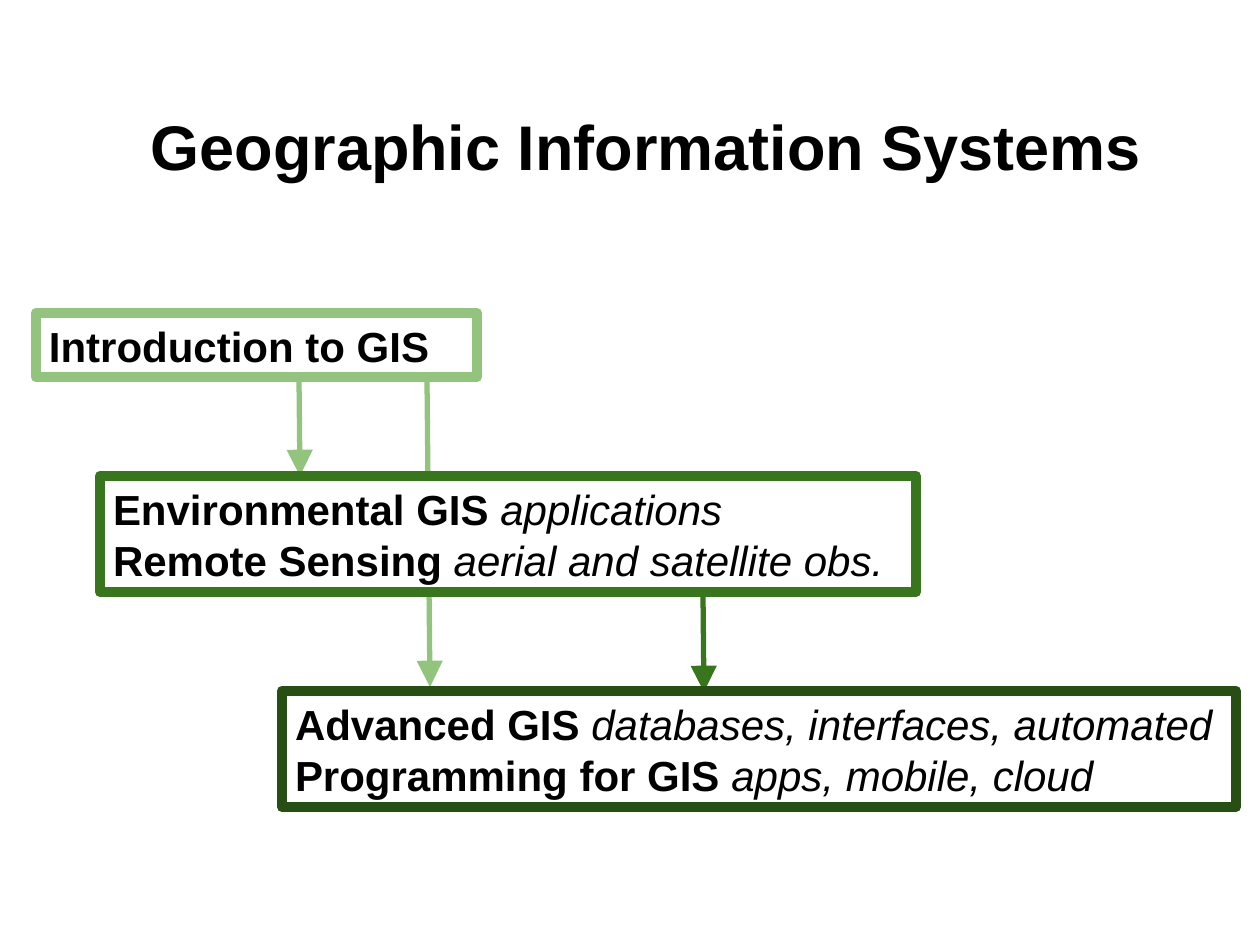
from dataclasses import dataclass

from lxml import etree
from pptx import Presentation
from pptx.dml.color import RGBColor
from pptx.enum.shapes import MSO_CONNECTOR, MSO_SHAPE
from pptx.enum.text import MSO_ANCHOR, MSO_AUTO_SIZE, PP_ALIGN
from pptx.oxml.ns import qn
from pptx.util import Emu, Pt

RECTANGLE = MSO_SHAPE.RECTANGLE
STRAIGHT = MSO_CONNECTOR.STRAIGHT
TOP, BOTTOM = MSO_ANCHOR.TOP, MSO_ANCHOR.BOTTOM
LEFT, CENTER = PP_ALIGN.LEFT, PP_ALIGN.CENTER
NO_AUTOFIT = MSO_AUTO_SIZE.NONE
TITLE_ONLY_LAYOUT = 5
PX = 914400 // 126


@dataclass(frozen=True)
class Theme:
    font: str = "Arial"
    text: str = "000000"
    box_fill: str = "FFFFFF"
    intro: str = "93C47D"
    applied: str = "38761D"
    advanced: str = "274E13"
    title_size: int = 36
    course_size: int = 24
    box_line: int = 6
    arrow_line: int = 3
    side_inset: int = 13
    title_inset: int = 12
    course_inset: int = 8
    title_indent: int = 32


THEME = Theme()

# Level colour, box (left, top, width, height), courses (name, topic)
LEVELS = [
    (THEME.intro, (36, 313, 441, 64), [("Introduction to GIS", "")]),
    (THEME.applied, (100, 476, 816, 116), [
        ("Environmental GIS ", "applications"),
        ("Remote Sensing ", "aerial and satellite obs."),
    ]),
    (THEME.advanced, (282, 691, 954, 116), [
        ("Advanced GIS ", "databases, interfaces, automated"),
        ("Programming for GIS ", "apps, mobile, cloud"),
    ]),
]

# Source level, start offset from its left edge, sideways drift, end y
PREREQUISITES = [(0, 263, 1, 476), (0, 391, 3, 687), (1, 603, 1, 692)]


def px(*lengths):
    return [Emu(length * PX) for length in lengths]


def add_text(paragraph, text, size, bold=False, italic=False):
    run = paragraph.add_run()
    run.text = text
    font = run.font
    font.name, font.size = THEME.font, Pt(size)
    font.bold, font.italic = bold, italic
    font.color.rgb = RGBColor.from_string(THEME.text)


def set_frame(frame, anchor, vertical_inset):
    frame.word_wrap = True
    frame.auto_size = NO_AUTOFIT
    frame.vertical_anchor = anchor
    side, vertical = px(THEME.side_inset, vertical_inset)
    frame.margin_left = frame.margin_right = side
    frame.margin_top = frame.margin_bottom = vertical


def set_line(line, color, width):
    line.color.rgb = RGBColor.from_string(color)
    line.width = Pt(width)
    return line._get_or_add_ln()


def fill_title(slide, box):
    title = slide.shapes.title
    title.left, title.top, title.width, title.height = px(*box)
    set_frame(title.text_frame, BOTTOM, THEME.title_inset)
    heading = title.text_frame.paragraphs[0]
    heading.alignment = CENTER
    properties = heading._p.get_or_add_pPr()
    properties.set("marL", "0")
    properties.set("indent", str(THEME.title_indent * PX))
    add_text(heading, "Geographic Information Systems", THEME.title_size, bold=True)


def add_level(slide, box, color, courses):
    level = slide.shapes.add_shape(RECTANGLE, *px(*box))
    level.shadow.inherit = False
    level.fill.solid()
    level.fill.fore_color.rgb = RGBColor.from_string(THEME.box_fill)
    outline = set_line(level.line, color, THEME.box_line)
    etree.SubElement(outline, qn("a:round"))
    frame = level.text_frame
    set_frame(frame, TOP, THEME.course_inset)
    for index, (name, topic) in enumerate(courses):
        course = frame.add_paragraph() if index else frame.paragraphs[0]
        course.alignment = LEFT
        course.line_spacing = 1.0
        add_text(course, name, THEME.course_size, bold=True)
        if topic:
            add_text(course, topic, THEME.course_size, italic=True)


def add_prerequisite(slide, box, color, offset, drift, end_y):
    """Draw an arrow down from the bottom edge of a level's box."""
    left, top, _, height = box
    start_x = left + offset
    arrow = slide.shapes.add_connector(
        STRAIGHT, *px(start_x, top + height, start_x + drift, end_y))
    outline = set_line(arrow.line, color, THEME.arrow_line)
    etree.SubElement(outline, qn("a:tailEnd"), type="triangle", w="lg", len="lg")
    etree.SubElement(arrow._element.spPr, qn("a:effectLst"))


def main():
    presentation = Presentation()
    presentation.slide_width, presentation.slide_height = px(1260, 945)
    slide = presentation.slides.add_slide(
        presentation.slide_layouts[TITLE_ONLY_LAYOUT])
    fill_title(slide, (63, 38, 1134, 157))
    for source, offset, drift, end_y in PREREQUISITES:
        color, box, _ = LEVELS[source]
        add_prerequisite(slide, box, color, offset, drift, end_y)
    for color, box, courses in LEVELS:
        add_level(slide, box, color, courses)
    presentation.save("out.pptx")


if __name__ == "__main__":
    main()
